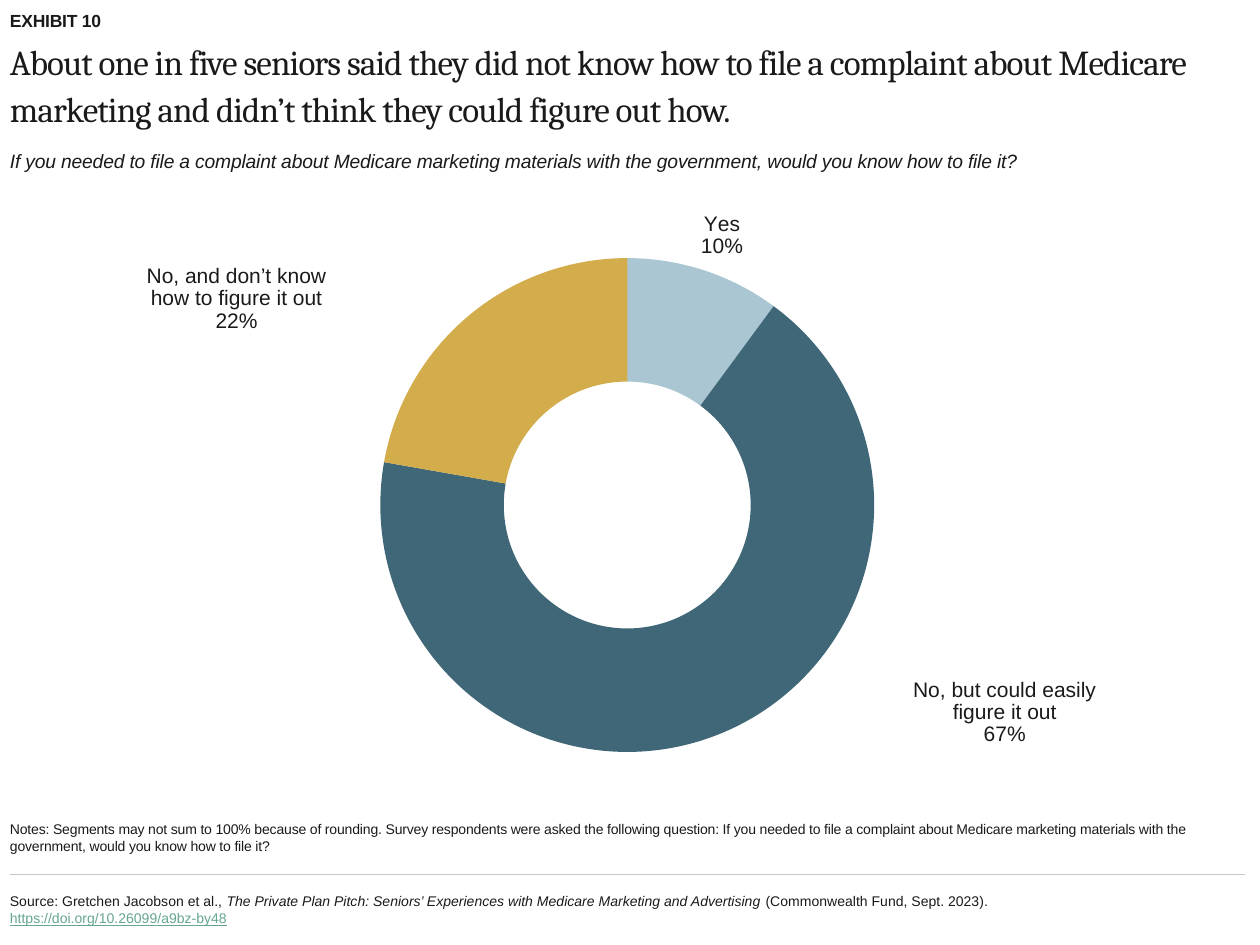
"""Build the exhibit slide on filing complaints about Medicare marketing."""
from dataclasses import dataclass

from lxml.etree import SubElement
from pptx import Presentation
from pptx.chart.data import CategoryChartData
from pptx.dml.color import RGBColor
from pptx.enum.chart import XL_CHART_TYPE as ChartType
from pptx.enum.shapes import MSO_CONNECTOR as Connector
from pptx.enum.text import MSO_ANCHOR as Anchor, MSO_AUTO_SIZE as AutoSize, PP_ALIGN as Align
from pptx.oxml import parse_xml
from pptx.oxml.ns import nsdecls, qn
from pptx.util import Cm, Pt


@dataclass(frozen=True)
class Theme:
    ink: str = "1A1A1A"
    link: str = "65A591"
    rule: str = "C6C6C6"
    segments: tuple = ("A9C6D2", "3F6777", "D3AC4C")
    sans: str = "Arial"
    serif: str = "Cambria"
    title: float = 20
    label: float = 12
    question: float = 11
    exhibit: float = 10
    small: float = 8


THEME = Theme()
LEFT, WIDTH = 0.2, 24.89
QUESTION = (
    "If you needed to file a complaint about Medicare marketing materials "
    "with the government, would you know how to file it?"
)
ANSWERS = {
    "Yes": 0.1,
    "No, but could easily figure it out": 0.67,
    "No, and don’t know how to figure it out": 0.22,
}
LABEL_OFFSETS = ((0.03, -0.16), (0.25, 0.06), (-0.22, -0.11))
PLOT_AREA = {"x": 0.3, "y": 0.12, "w": 0.4, "h": 0.85}


def style_font(font, size, name=THEME.sans, color=THEME.ink, bold=False, italic=False):
    font.name, font.size, font.bold, font.italic = name, Pt(size), bold, italic
    font.color.rgb = RGBColor.from_string(color)


def place(shape, left, top, width, height):
    shape.left, shape.top, shape.width, shape.height = map(Cm, (left, top, width, height))


def prepare_frame(shape, anchor):
    frame = shape.text_frame
    frame.word_wrap = True
    frame.auto_size = AutoSize.NONE
    frame.vertical_anchor = anchor
    frame.margin_left = frame.margin_right = frame.margin_top = frame.margin_bottom = 0
    return frame


def fill_placeholder(shape, text, box, size, anchor=Anchor.TOP, spacing=-10, lines=1.0, **font):
    place(shape, *box)
    frame = prepare_frame(shape, anchor)
    frame.text = text
    paragraph = frame.paragraphs[0]
    properties = paragraph._p.get_or_add_pPr()
    properties.set("marL", "0")
    properties.set("indent", "0")
    SubElement(properties, qn("a:buNone"))
    paragraph.alignment = Align.LEFT
    paragraph.space_before = Pt(0)
    paragraph.line_spacing = lines
    for run in paragraph.runs:
        style_font(run.font, size, **font)
        run._r.get_or_add_rPr().set("spc", str(spacing))


def manual_layout(**values):
    items = "".join(f'<c:{key} val="{value}"/>' for key, value in values.items())
    return parse_xml(
        f'<c:layout {nsdecls("c")}><c:manualLayout>{items}</c:manualLayout></c:layout>'
    )


def set_value(parent, tag, value):
    child = parent.find(qn(tag))
    if child is None:
        child = SubElement(parent, qn(tag))
    child.set("val", value)


def format_labels(series):
    labels = series.data_labels
    labels.show_category_name = labels.show_value = True
    labels.number_format, labels.number_format_is_linked = "0%", False
    style_font(labels.font, THEME.label)
    set_value(labels._element, "c:showLeaderLines", "0")
    for index, (x, y) in enumerate(LABEL_OFFSETS):
        style_font(series.points[index].data_label.font, THEME.label)
        label = series._element.xpath(f"c:dLbls/c:dLbl[c:idx/@val='{index}']")[0]
        label.find(".//" + qn("a:bodyPr")).set("wrap", "square")
        number_format = parse_xml(
            f'<c:numFmt {nsdecls("c")} formatCode="0%" sourceLinked="0"/>'
        )
        label.find(qn("c:idx")).addnext(number_format)
        number_format.addprevious(manual_layout(x=x, y=y))
        set_value(label, "c:showVal", "1")
        set_value(label, "c:showCatName", "1")
        SubElement(label, qn("c:separator")).text = "\n"


def add_doughnut(slide):
    data = CategoryChartData(number_format="0%")
    data.categories = list(ANSWERS)
    data.add_series("Series 1", list(ANSWERS.values()))
    box = map(Cm, (LEFT, 3.73, WIDTH, 11.84))
    chart = slide.shapes.add_chart(ChartType.DOUGHNUT, *box, data).chart
    chart.has_title = chart.has_legend = False
    style_font(chart.font, THEME.exhibit)
    plot = chart.plots[0]
    plot.vary_by_categories = True
    set_value(plot._element, "c:holeSize", "60")
    series = plot.series[0]
    for index, color in enumerate(THEME.segments):
        segment = series.points[index].format
        segment.fill.solid()
        segment.fill.fore_color.rgb = RGBColor.from_string(color)
        segment.line.fill.background()
    format_labels(series)
    area = chart._chartSpace.find(".//" + qn("c:plotArea"))
    for layout in area.findall(qn("c:layout")):
        area.remove(layout)
    area.insert(0, manual_layout(layoutTarget="inner", xMode="edge", yMode="edge", **PLOT_AREA))


def add_rule(slide, top):
    ends = map(Cm, (LEFT, top, LEFT + WIDTH, top))
    rule = slide.shapes.add_connector(Connector.STRAIGHT, *ends)
    rule.line.color.rgb = RGBColor.from_string(THEME.rule)
    rule.line.width = Pt(0.75)
    SubElement(rule._element.spPr, qn("a:effectLst"))


def add_source(slide):
    shape = slide.shapes.add_textbox(*map(Cm, (LEFT, 17.75, 19.81, 1.17)))
    paragraph = prepare_frame(shape, Anchor.MIDDLE).paragraphs[0]
    parts = (
        ("Source: Gretchen Jacobson et al., ", {}),
        ("The Private Plan Pitch: Seniors’ Experiences with Medicare Marketing and Advertising",
         {"italic": True}),
        (" (Commonwealth Fund, Sept. 2023). ", {}),
        ("https://doi.org/10.26099/a9bz-by48", {"color": THEME.link}),
    )
    for text, font in parts:
        run = paragraph.add_run()
        run.text = text
        style_font(run.font, THEME.small, **font)
        run.font.underline = "color" in font


def main():
    presentation = Presentation()
    presentation.slide_width, presentation.slide_height = Cm(25.4), Cm(19.05)
    slide = presentation.slides.add_slide(presentation.slide_layouts.get_by_name("Comparison"))
    title, exhibit, question, notes, spare = slide.placeholders
    spare._element.getparent().remove(spare._element)
    fill_placeholder(exhibit, "EXHIBIT 10", (LEFT, 0.2, WIDTH, 0.51), THEME.exhibit, bold=True)
    fill_placeholder(
        title,
        "About one in five seniors said they did not know how to file a complaint about "
        "Medicare marketing and didn’t think they could figure out how.",
        (LEFT, 0.74, WIDTH, 2.11), THEME.title, spacing=-50, lines=1.1, name=THEME.serif,
    )
    fill_placeholder(question, QUESTION, (LEFT, 2.9, WIDTH, 0.69), THEME.question,
                     Anchor.MIDDLE, italic=True)
    add_doughnut(slide)
    fill_placeholder(
        notes,
        "Notes: Segments may not sum to 100% because of rounding. Survey respondents "
        f"were asked the following question: {QUESTION}",
        (LEFT, 15.95, WIDTH, 1.27), THEME.small, Anchor.BOTTOM,
    )
    add_rule(slide, 17.63)
    add_source(slide)
    presentation.save("out.pptx")


if __name__ == "__main__":
    main()
